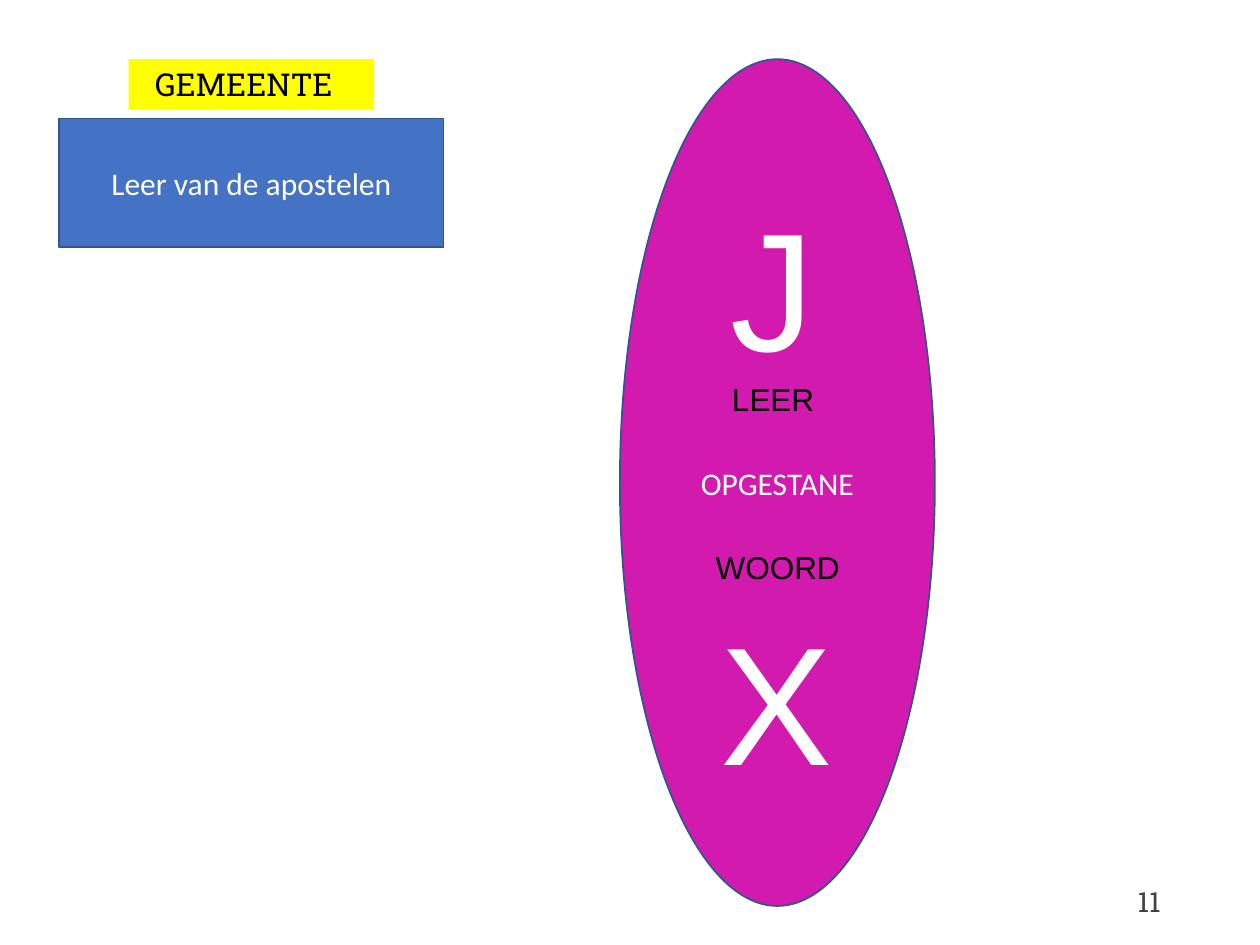
from dataclasses import dataclass
from typing import Optional

from pptx import Presentation
from pptx.dml.color import RGBColor
from pptx.enum.shapes import MSO_SHAPE as Shape
from pptx.enum.text import MSO_ANCHOR as Anchor, PP_ALIGN as Align
from pptx.util import Inches, Pt

COLORS = {
    "blue": "4472C4",
    "outline": "325491",
    "yellow": "FFFF00",
    "magenta": "D21AAF",
    "white": "FFFFFF",
    "black": "000000",
    "gray": "424242",
}


@dataclass
class Box:
    left: float
    top: float
    width: float
    height: float


@dataclass
class Panel:
    kind: Shape
    box: Box
    fill: str
    outline: Optional[str] = None


@dataclass
class Label:
    text: str
    box: Box
    size: int = 18
    color: str = "black"
    font: str = "Arial"
    indent: float = 0.1
    align: Align = Align.LEFT
    anchor: Anchor = Anchor.TOP


def color(name: str) -> RGBColor:
    return RGBColor.from_string(COLORS[name])


def lengths(box: Box) -> tuple:
    return tuple(Inches(n) for n in (box.left, box.top, box.width, box.height))


def write_text(shape, text: str, *, size: int = 18, color_name: str = "white",
               font: str = "Calibri", indent: float = 0.1,
               align: Align = Align.CENTER, anchor: Anchor = Anchor.MIDDLE) -> None:
    frame = shape.text_frame
    frame.word_wrap = True
    frame.vertical_anchor = anchor
    frame.margin_left = Inches(indent)
    paragraph = frame.paragraphs[0]
    paragraph.alignment = align
    run = paragraph.add_run()
    run.text = text
    run.font.name = font
    run.font.size = Pt(size)
    run.font.color.rgb = color(color_name)


def draw_panel(slide, panel: Panel):
    shape = slide.shapes.add_shape(panel.kind, *lengths(panel.box))
    shape.shadow.inherit = False
    shape.fill.solid()
    shape.fill.fore_color.rgb = color(panel.fill)
    if panel.outline:
        shape.line.color.rgb = color(panel.outline)
        shape.line.width = Pt(1)
    else:
        shape.line.fill.background()
    return shape


def draw_label(slide, label: Label) -> None:
    text_box = slide.shapes.add_textbox(*lengths(label.box))
    write_text(text_box, label.text, size=label.size, color_name=label.color,
               font=label.font, indent=label.indent, align=label.align,
               anchor=label.anchor)


TEACHING = Panel(Shape.RECTANGLE, Box(0.47, 0.94, 3.05, 1.02), "blue", "outline")
CHURCH = Panel(Shape.RECTANGLE, Box(1.02, 0.47, 1.95, 0.4), "yellow")
RISEN = Panel(Shape.OVAL, Box(4.92, 0.47, 2.5, 6.72), "magenta", "outline")

LABELS = [
    Label("LEER", Box(5.16, 2.97, 2.97, 0.4), indent=0.65),
    Label("WOORD", Box(5.23, 4.3, 2.27, 0.4), indent=0.45),
    Label("J", Box(5.7, 1.41, 1.09, 1.72), size=96, color="white"),
    Label("X", Box(5.62, 4.69, 1.41, 1.72), size=96, color="white"),
    # Slide number
    Label("11", Box(7.06, 6.95, 2.25, 0.4), size=16, color="gray",
          font="Roboto Slab", align=Align.RIGHT, anchor=Anchor.MIDDLE),
]


def main() -> None:
    presentation = Presentation()
    presentation.slide_width = Inches(10)
    presentation.slide_height = Inches(7.5)
    slide = presentation.slides.add_slide(presentation.slide_layouts[6])

    # Church heading and its teaching
    write_text(draw_panel(slide, TEACHING), "Leer van de apostelen")
    write_text(draw_panel(slide, CHURCH), "GEMEENTE", color_name="black",
               font="Roboto Slab", indent=0.21, align=Align.LEFT, anchor=Anchor.TOP)

    # Ellipse with the words and letters on it
    write_text(draw_panel(slide, RISEN), "OPGESTANE")
    for label in LABELS:
        draw_label(slide, label)

    presentation.save("out.pptx")


if __name__ == "__main__":
    main()
